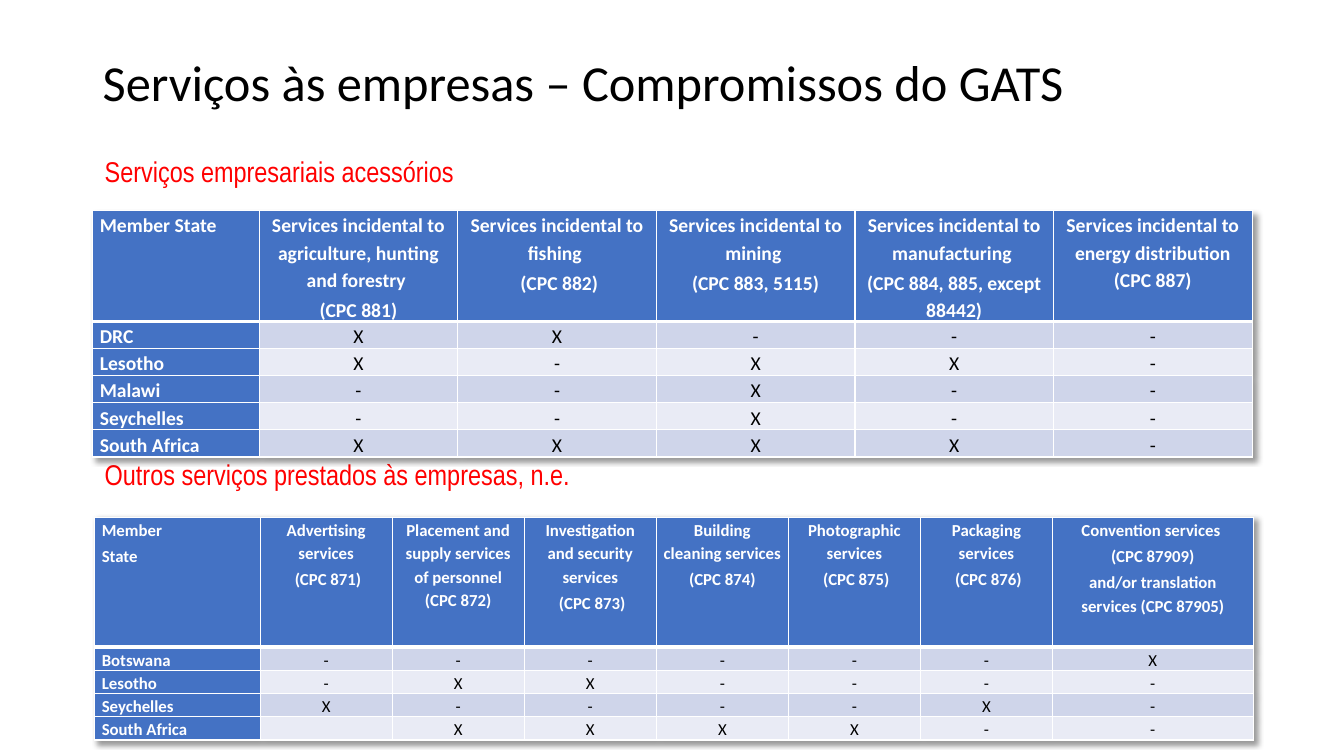
from lxml import etree
from pptx import Presentation
from pptx import util as u
from pptx.dml.color import RGBColor
from pptx.enum import text
from pptx.oxml import parse_xml
from pptx.oxml.ns import nsdecls, qn

WIDTH, HEIGHT = 13.33, 7.5
BLACK, WHITE, RED, BLUE = "000000", "FFFFFF", "FF0000", "4472C4"
BANDS = ["CFD5EA", "E9EBF5"]

HEADINGS = [
    dict(label="Serviços às empresas – Compromissos do GATS", box=(0.92, 0.4, 11.5, 1.45),
         size=36, font="Calibri", color=BLACK, spacing=0.9, bottom=0.6),
    dict(label="Outros serviços prestados às empresas, n.e.", box=(0.94, 4.53, 8.62, 0.67),
         size=20.4, font="Arial Narrow", color=RED, spacing=0.8, bottom=0.3),
    dict(label="Serviços empresariais acessórios", box=(0.94, 1.54, 5.49, 0.62),
         size=20.4, font="Arial Narrow", color=RED, spacing=0.7, bottom=0.27),
]

TABLES = [
    dict(
        at=(0.94, 5.13), size=12, cols=[1.64] + [1.31] * 6 + [1.99], head=1.29, row=0.17,
        header=[
            ["Member", "State"],
            ["Advertising services", " (CPC 871)"],
            ["Placement and supply services of personnel (CPC 872)"],
            ["Investigation and security services", " (CPC 873)"],
            ["Building cleaning services ", "(CPC 874)"],
            ["Photographic services", " (CPC 875)"],
            ["Packaging services", " (CPC 876)"],
            ["Convention services ", "(CPC 87909)", "and/or translation services (CPC 87905)"],
        ],
        members=[("Botswana", "------X"), ("Lesotho", "-XX----"),
                 ("Seychelles", "X----X-"), ("South Africa", " XXXX--")],
    ),
    dict(
        at=(0.92, 2.09), size=14, cols=[1.65] + [1.97] * 5, head=0.93, row=0.22,
        header=[
            ["Member State"],
            ["Services incidental to agriculture, hunting and forestry ", "(CPC 881)"],
            ["Services incidental to fishing ", " (CPC 882)"],
            ["Services incidental to mining ", "(CPC 883, 5115)"],
            ["Services incidental to manufacturing ", "(CPC 884, 885, except 88442)"],
            ["Services incidental to energy distribution (CPC 887)"],
        ],
        members=[("DRC", "XX---"), ("Lesotho", "X-XX-"), ("Malawi", "--X--"),
                 ("Seychelles", "--X--"), ("South Africa", "XXXX-")],
    ),
]


def rgb(color):
    return RGBColor.from_string(color)


def add_run(p, label, size, font, color, bold=False):
    r = p.add_run()
    r.text = label
    r.font.size = u.Pt(size)
    r.font.name = font
    r.font.bold = bold
    r.font.color.rgb = rgb(color)


def add_heading(s, label, box, size, font, color, spacing, bottom):
    tf = s.shapes.add_textbox(*map(u.Inches, box)).text_frame
    tf.word_wrap = True
    tf.vertical_anchor = text.MSO_ANCHOR.MIDDLE
    tf.margin_bottom = u.Inches(bottom)
    p = tf.paragraphs[0]
    p.line_spacing = spacing
    add_run(p, label, size, font, color)


def set_borders(cell, top, bottom):
    tcPr = cell._tc.get_or_add_tcPr()
    widths = {"lnL": 1, "lnR": 1, "lnT": top, "lnB": bottom}
    for i, (side, width) in enumerate(widths.items()):
        tcPr.insert(i, parse_xml(
            f'<a:{side} {nsdecls("a")} w="{u.Pt(width)}"><a:solidFill>'
            f'<a:srgbClr val="{WHITE}"/></a:solidFill></a:{side}>'))


def fill_cell(cell, lines, size, fill, color, bold, centred):
    cell.margin_left = cell.margin_right = u.Inches(0.07)
    cell.margin_top = cell.margin_bottom = 0
    cell.fill.solid()
    cell.fill.fore_color.rgb = rgb(fill)
    tf = cell.text_frame
    for i, line in enumerate(lines):
        p = tf.add_paragraph() if i else tf.paragraphs[0]
        p.alignment = text.PP_ALIGN.CENTER if centred else text.PP_ALIGN.LEFT
        p.line_spacing = 1.15
        p.space_before = p.space_after = u.Pt(1)
        if line.strip():
            add_run(p, line, size, "Calibri", color, bold)
        else:
            etree.SubElement(p._p, qn("a:endParaRPr"), sz=str(size * 100))


def add_shadow(table):
    table._tbl.tblPr.insert(0, parse_xml(
        f'<a:effectLst {nsdecls("a")}><a:outerShdw blurRad="50800" dist="38100" '
        f'dir="2700000" algn="tl" rotWithShape="0"><a:srgbClr val="{BLACK}">'
        '<a:alpha val="40000"/></a:srgbClr></a:outerShdw></a:effectLst>'))


def add_commitments(s, at, size, cols, head, row, header, members):
    rows = [header] + [[[name]] + [[mark] for mark in marks] for name, marks in members]
    heights = [head] + [row] * len(members)
    frame = (*at, sum(cols), sum(heights))
    table = s.shapes.add_table(len(rows), len(cols), *map(u.Inches, frame)).table
    for column, width in zip(table.columns, cols):
        column.width = u.Inches(width)
    for i, (cells, height) in enumerate(zip(rows, heights)):
        table.rows[i].height = u.Inches(height)
        for j, lines in enumerate(cells):
            label = i == 0 or j == 0
            fill = BLUE if label else BANDS[(i - 1) % 2]
            cell = table.cell(i, j)
            fill_cell(cell, lines, size, fill, WHITE if label else BLACK, label, j > 0)
            set_borders(cell, 3 if i == 1 else 1, 3 if i == 0 else 1)
    add_shadow(table)


def main():
    prs = Presentation()
    prs.slide_width, prs.slide_height = u.Inches(WIDTH), u.Inches(HEIGHT)
    s = prs.slides.add_slide(prs.slide_layouts[6])
    for heading in HEADINGS:
        add_heading(s, **heading)
    for commitments in TABLES:
        add_commitments(s, **commitments)
    prs.save("out.pptx")


if __name__ == "__main__":
    main()
